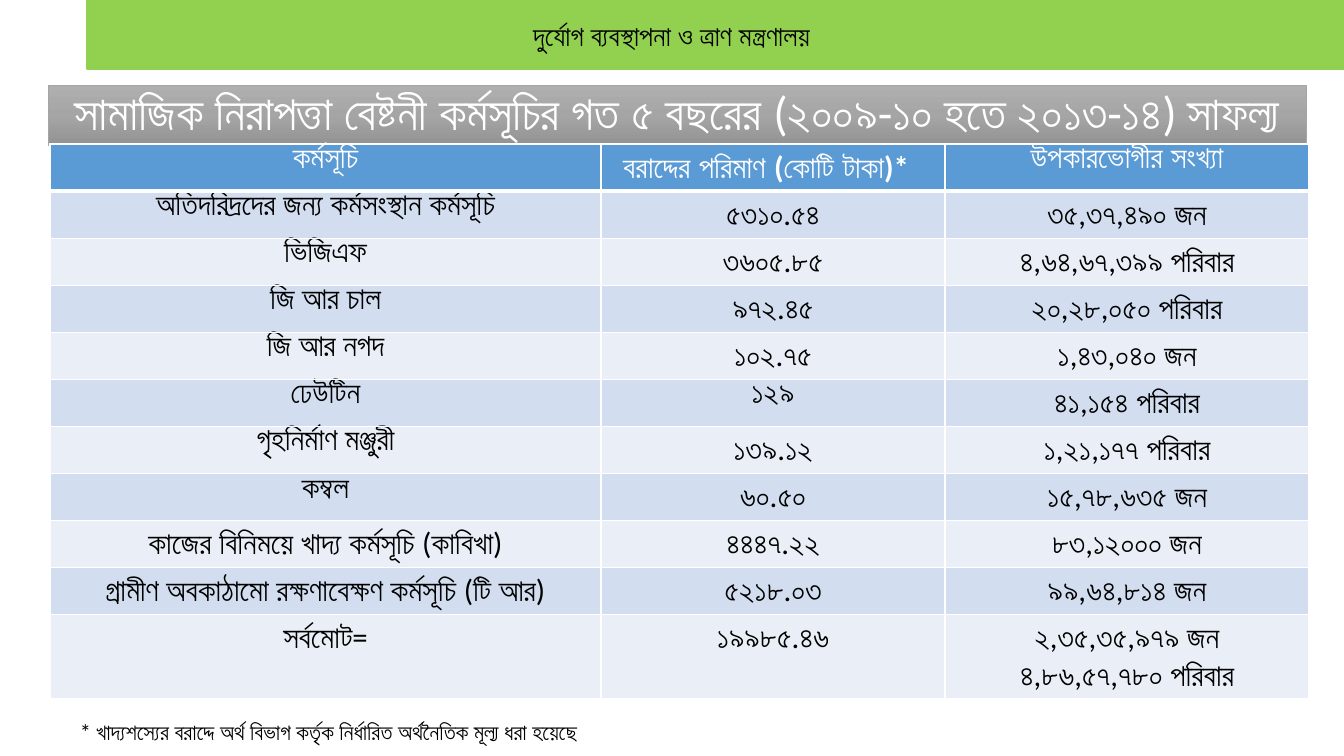
import copy
import lxml.etree
import pptx
import pptx.dml.color
import pptx.enum.shapes
import pptx.enum.text
import pptx.oxml.ns
import pptx.util
from dataclasses import dataclass

PX = 914400 / 100.8


@dataclass(frozen=True)
class Theme:
    font: str = "Calibri"
    black: str = "000000"
    white: str = "FFFFFF"
    green: str = "92D050"
    blue: str = "5B9BD5"
    bands: tuple = ("D2DEEF", "EAEFF7")
    greys: tuple = ("AFAFAF", "A5A5A5", "939393")
    ministry_size: int = 20
    title_size: int = 34
    table_size: int = 22
    note_size: int = 16


theme = Theme()
rgb = pptx.dml.color.RGBColor.from_string
qn = pptx.oxml.ns.qn
center = pptx.enum.text.PP_ALIGN.CENTER
left = pptx.enum.text.PP_ALIGN.LEFT
rectangle = pptx.enum.shapes.MSO_SHAPE.RECTANGLE


def emu(*lengths):
    """Turn px lengths into a list of EMU."""
    return [pptx.util.Emu(round(length * PX)) for length in lengths]


def set_text(frame, text, size, color, align=center, bold=False):
    frame.text = text
    for para in frame.paragraphs:
        para.alignment = align
        for span in para.runs:
            span.font.name = theme.font
            span.font.size = pptx.util.Pt(size)
            span.font.bold = bold
            span.font.color.rgb = rgb(color)


deck = pptx.Presentation()
deck.slide_width, deck.slide_height = emu(1344, 756)
page = deck.slides.add_slide(deck.slide_layouts[6])

# Ministry band
band = page.shapes.add_shape(rectangle, *emu(87, 0, 1257, 69))
band.shadow.inherit = False
band.fill.solid()
band.fill.fore_color.rgb = rgb(theme.green)
band.line.color.rgb = rgb(theme.green)
band.line.width = pptx.util.Pt(1)

# Title bar
title = page.shapes.add_shape(rectangle, *emu(48, 85, 1258, 60))
title.shadow.inherit = False
title.fill.gradient()
title.fill.gradient_angle = 270
stop_list = title.element.spPr.find(qn("a:gradFill")).find(qn("a:gsLst"))
stop_list.insert(1, copy.deepcopy(stop_list[0]))
for stop, position, grey in zip(title.fill.gradient_stops, (0, 0.5, 1), theme.greys):
    stop.position = position
    stop.color.rgb = rgb(grey)
title.line.color.rgb = rgb(theme.greys[1])
title.line.width = pptx.util.Pt(0.5)
title.text_frame.word_wrap = True
title.text_frame.vertical_anchor = pptx.enum.text.MSO_ANCHOR.MIDDLE
set_text(title.text_frame,
         "সামাজিক নিরাপত্তা বেষ্টনী কর্মসূচির গত ৫ বছরের (২০০৯-১০ হতে ২০১৩-১৪) সাফল্য",
         theme.title_size, theme.white)
title.text_frame.paragraphs[0].line_spacing = 0.9

# Ministry name and footnote
labels = [
    ((326, 14, 691, 44), "দুর্যোগ ব্যবস্থাপনা ও ত্রাণ মন্ত্রণালয়", theme.ministry_size, center),
    ((70, 713, 581, 37),
     "* খাদ্যশস্যের বরাদ্দে অর্থ বিভাগ কর্তৃক নির্ধারিত অর্থনৈতিক মূল্য ধরা হয়েছে",
     theme.note_size, left),
]
for bounds, text, size, align in labels:
    box = page.shapes.add_textbox(*emu(*bounds))
    box.text_frame.word_wrap = True
    box.text_frame.auto_size = pptx.enum.text.MSO_AUTO_SIZE.SHAPE_TO_FIT_TEXT
    set_text(box.text_frame, text, size, theme.black, align)

# Programme table
rows = [
    ("কর্মসূচি", "বরাদ্দের পরিমাণ (কোটি টাকা)*", "উপকারভোগীর সংখ্যা"),
    ("অতিদরিদ্রদের জন্য কর্মসংস্থান কর্মসূচি", "৫৩১০.৫৪", "৩৫,৩৭,৪৯০ জন"),
    ("ভিজিএফ", "৩৬০৫.৮৫", "৪,৬৪,৬৭,৩৯৯ পরিবার"),
    ("জি আর চাল", "৯৭২.৪৫", "২০,২৮,০৫০ পরিবার"),
    ("জি আর নগদ", "১০২.৭৫", "১,৪৩,০৪০ জন"),
    ("ঢেউটিন", "১২৯", "৪১,১৫৪ পরিবার"),
    ("গৃহনির্মাণ মঞ্জুরী", "১৩৯.১২", "১,২১,১৭৭ পরিবার"),
    ("কম্বল", "৬০.৫০", "১৫,৭৮,৬৩৫ জন"),
    ("কাজের বিনিময়ে খাদ্য কর্মসূচি (কাবিখা)", "৪৪৪৭.২২", "৮৩,১২০০০ জন"),
    ("গ্রামীণ অবকাঠামো রক্ষণাবেক্ষণ কর্মসূচি (টি আর)", "৫২১৮.০৩", "৯৯,৬৪,৮১৪ জন"),
    ("সর্বমোট=", "১৯৯৮৫.৪৬", "২,৩৫,৩৫,৯৭৯ জন\n৪,৮৬,৫৭,৭৮০ পরিবার"),
]
# Cells whose text starts at the very top edge
raised = {(row, 0) for row in range(8)} | {(0, 2), (5, 1)}

table = page.shapes.add_table(len(rows), 3, *emu(50, 144, 1259, 451)).table
table.horz_banding = False
for column, width in zip(table.columns, emu(551, 344, 364)):
    column.width = width
for row_index, texts in enumerate(rows):
    header = row_index == 0
    table.rows[row_index].height = emu(41)[0]
    for column_index, text in enumerate(texts):
        cell = table.cell(row_index, column_index)
        set_text(cell.text_frame, text, theme.table_size,
                 theme.white if header else theme.black, bold=header)
        if (row_index, column_index) in raised:
            cell.margin_top = cell.margin_bottom = 0
        properties = cell._tc.get_or_add_tcPr()
        for side in ("lnL", "lnR", "lnT", "lnB"):
            thick = (header and side == "lnB") or (row_index == 1 and side == "lnT")
            border = lxml.etree.SubElement(properties, qn("a:" + side),
                                           w=str(pptx.util.Pt(3 if thick else 1)))
            paint = lxml.etree.SubElement(border, qn("a:solidFill"))
            lxml.etree.SubElement(paint, qn("a:srgbClr"), val=theme.white)
        cell.fill.solid()
        cell.fill.fore_color.rgb = rgb(
            theme.blue if header else theme.bands[(row_index - 1) % 2])
table.cell(0, 1).margin_right = emu(24)[0]

deck.save("out.pptx")
